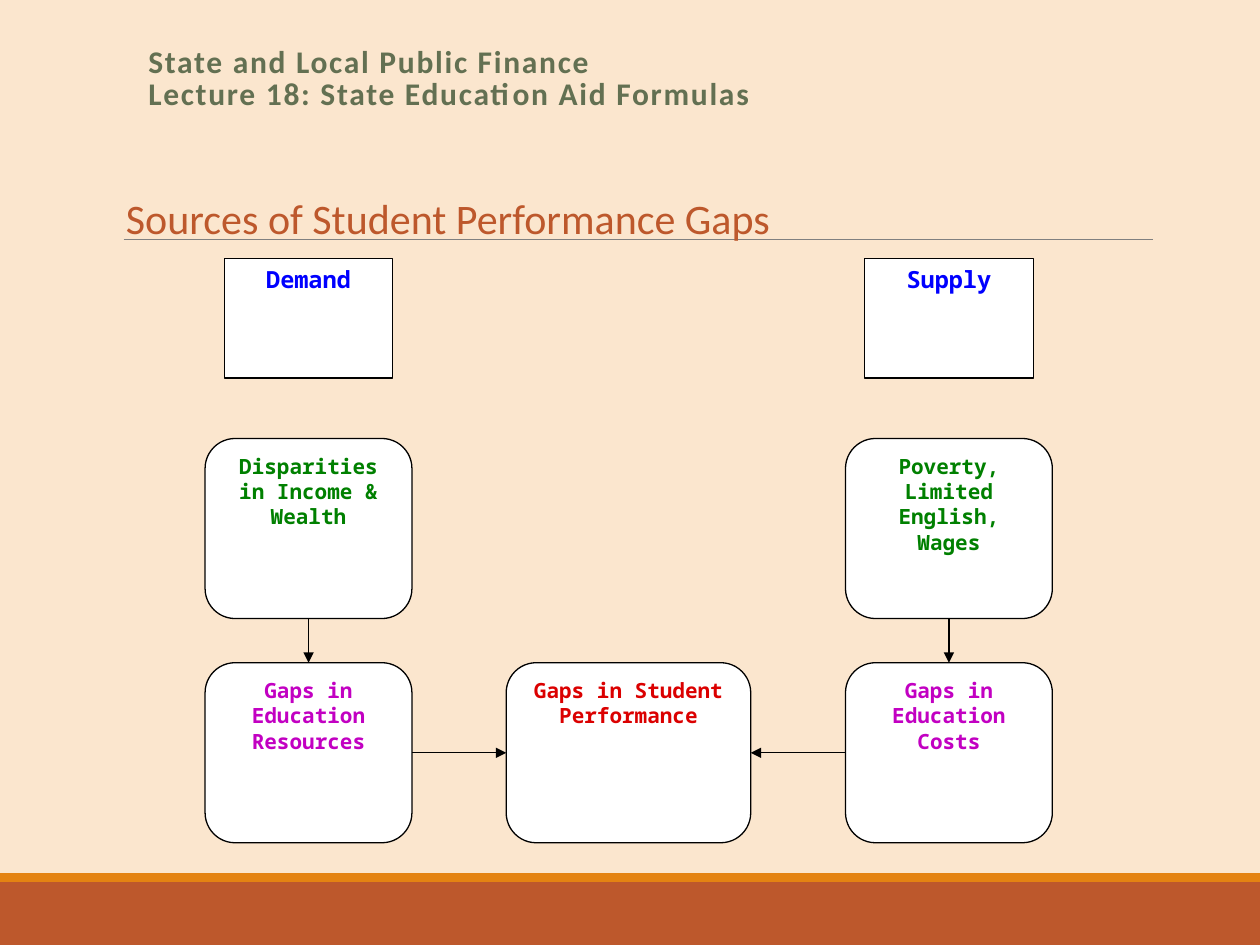
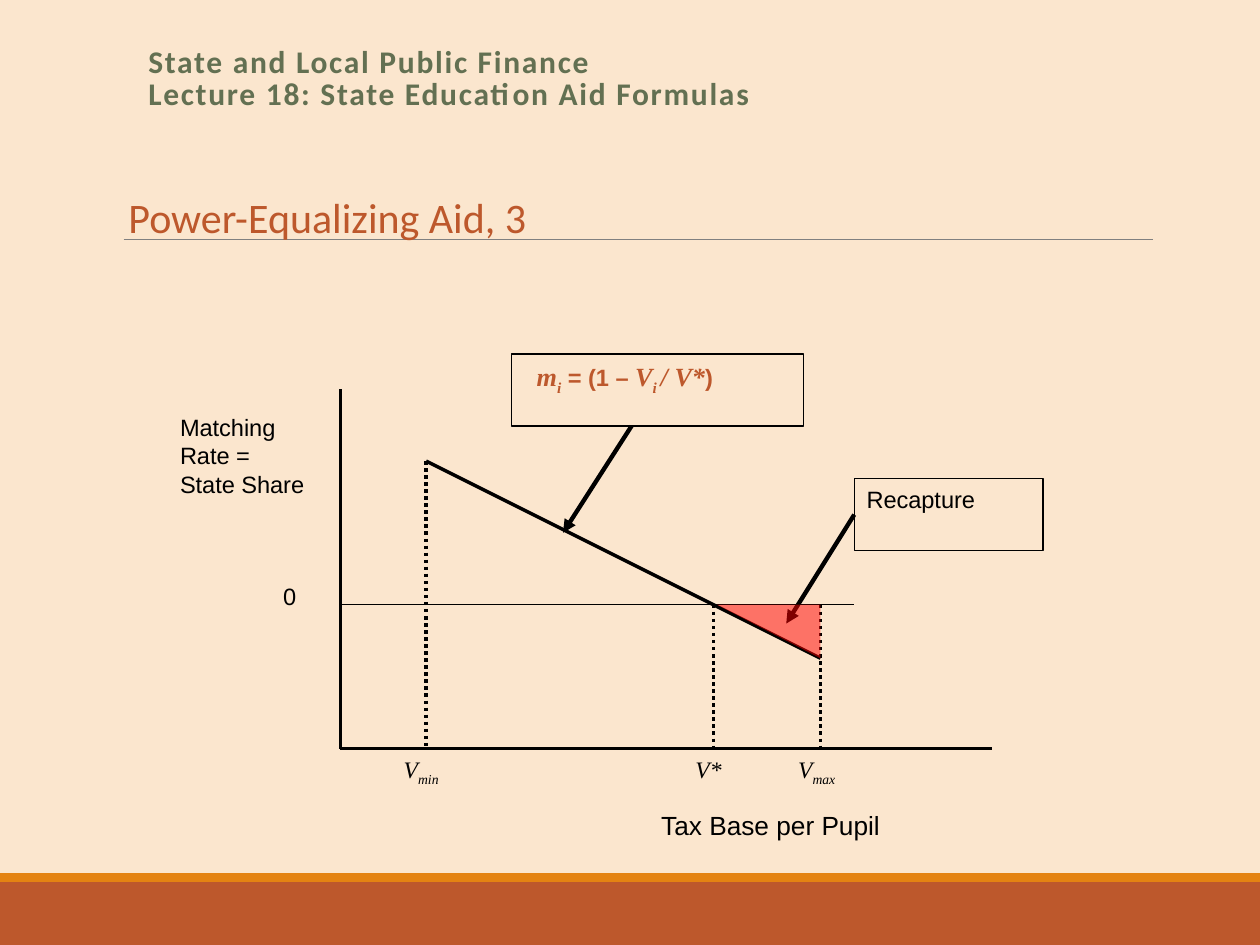
from dataclasses import dataclass, replace

from lxml import etree
from pptx import Presentation
from pptx import util as u
from pptx.dml.color import RGBColor
from pptx.enum import dml, shapes, text
from pptx.oxml import ns

CREAM = RGBColor(0xFB, 0xE6, 0xCE)
RUST = RGBColor(0xBD, 0x58, 0x2C)
ORANGE = RGBColor(0xE4, 0x83, 0x12)
GRAY = RGBColor(0x80, 0x80, 0x80)
OLIVE = RGBColor(0x63, 0x70, 0x52)
BLACK = RGBColor(0, 0, 0)
WHITE = RGBColor(0xFF, 0xFF, 0xFF)
GREEN = RGBColor(0, 0x80, 0)
PURPLE = RGBColor(0xC2, 0, 0xC2)
CRIMSON = RGBColor(0xDB, 0, 0)
BLUE = RGBColor(0, 0, 0xFF)
RED = RGBColor(0xFF, 0, 0)

TOP, LEFT, BOTTOM, RIGHT = range(4)  # connection sites
SHAPE = shapes.MSO_SHAPE


@dataclass
class TextStyle:
    font: str
    size: float
    color: RGBColor = BLACK
    bold: bool = False
    italic: bool = False
    baseline: int = 0
    tracking: int = 0


HEADER = TextStyle("Calibri", 18, OLIVE, bold=True, tracking=100)
TITLE = TextStyle("Calibri", 24, RUST)
FLOW = TextStyle("Noto Sans Mono", 12, bold=True)
LABEL = TextStyle("Arial", 13.5)
SYMBOL = TextStyle("Times New Roman", 13.5, italic=True)


class Deck:
    """Holds the presentation's style and the current slide."""

    def __init__(self):
        self.presentation = Presentation()
        self.presentation.slide_width = u.Cm(25.4)
        self.presentation.slide_height = u.Cm(19.05)
        self.slide = None

    def new_slide(self, title, left, top, width, height, line_spacing=1.0):
        self.slide = self.presentation.slides.add_slide(self.presentation.slide_layouts[6])
        self.slide.background.fill.solid()
        self.slide.background.fill.fore_color.rgb = CREAM
        # Footer bands and title rule
        self.shape(SHAPE.RECTANGLE, 0, 17.78, 25.4, 1.27, fill=RUST)
        self.shape(SHAPE.RECTANGLE, 0, 17.6, 25.4, 0.18, fill=ORANGE)
        self.line((2.49, 4.83), (23.24, 4.83), 0.5, color=GRAY)
        # Course header and slide title
        header = "State and Local Public Finance\nLecture 18: State Education Aid Formulas"
        self.textbox(2.74, 0.84, 20.96, 1.65, [[(header, HEADER)]], line_spacing=0.85)
        self.textbox(left, top, width, height, [[(title, TITLE)]],
                     line_spacing=line_spacing, anchor=text.MSO_ANCHOR.MIDDLE)

    def add_text(self, shape, paragraphs, align=text.PP_ALIGN.LEFT,
                 anchor=text.MSO_ANCHOR.TOP, line_spacing=None):
        """Fill a shape with paragraphs, each a list of (words, style) runs."""
        frame = shape.text_frame
        frame.word_wrap = True
        frame.vertical_anchor = anchor
        for index, runs in enumerate(paragraphs):
            paragraph = frame.add_paragraph() if index else frame.paragraphs[0]
            paragraph.alignment = align
            paragraph.line_spacing = line_spacing
            for words, style in runs:
                for number, row in enumerate(words.split("\n")):
                    if number:
                        paragraph.add_line_break()
                    self.add_run(paragraph, row, style)

    def add_run(self, paragraph, words, style):
        run = paragraph.add_run()
        run.text = words
        font = run.font
        font.name, font.size = style.font, u.Pt(style.size)
        font.bold, font.italic = style.bold, style.italic
        font.color.rgb = style.color
        properties = run._r.get_or_add_rPr()
        if style.baseline:
            properties.set("baseline", str(style.baseline * 1000))
        if style.tracking:
            properties.set("spc", str(style.tracking))

    def textbox(self, left, top, width, height, paragraphs, **layout):
        box = self.slide.shapes.add_textbox(u.Cm(left), u.Cm(top), u.Cm(width), u.Cm(height))
        self.add_text(box, paragraphs, **layout)

    def shape(self, kind, left, top, width, height, fill=None, outline=None, alpha=None):
        shape = self.slide.shapes.add_shape(
            kind, u.Cm(left), u.Cm(top), u.Cm(width), u.Cm(height))
        shape.shadow.inherit = False
        if fill is None:
            shape.fill.background()
        else:
            shape.fill.solid()
            shape.fill.fore_color.rgb = fill
        if alpha is not None:
            color = shape._element.spPr.find(".//" + ns.qn("a:srgbClr"))
            etree.SubElement(color, ns.qn("a:alpha")).set("val", str(alpha * 1000))
        if outline is None:
            shape.line.fill.background()
        else:
            shape.line.color.rgb = outline
            shape.line.width = u.Pt(0.75)
        return shape

    def flow_box(self, kind, center, top, width, height, words, color, size=12):
        box = self.shape(kind, center - width / 2, top, width, height, WHITE, BLACK)
        style = replace(FLOW, color=color, size=size)
        self.add_text(box, [[(words, style)]], align=text.PP_ALIGN.CENTER)
        return box

    def line(self, start, end, weight, color=BLACK, arrow=False, dotted=False):
        """Draw a line; each end is a point or a (shape, site) pair."""
        points = [(0, 0) if hasattr(spot[0], "shape_id") else spot for spot in (start, end)]
        connector = self.slide.shapes.add_connector(
            shapes.MSO_CONNECTOR.STRAIGHT,
            *[u.Cm(value) for point in points for value in point])
        for spot, join in ((start, connector.begin_connect), (end, connector.end_connect)):
            if hasattr(spot[0], "shape_id"):
                join(*spot)
        connector.line.color.rgb = color
        connector.line.width = u.Pt(weight)
        if dotted:
            connector.line.dash_style = dml.MSO_LINE.ROUND_DOT
        properties = connector._element.spPr
        if arrow:
            outline = properties.find(ns.qn("a:ln"))
            etree.SubElement(outline, ns.qn("a:tailEnd")).set("type", "triangle")
        etree.SubElement(properties, ns.qn("a:effectLst"))


def performance_gaps(deck):
    deck.new_slide("Sources of Student Performance Gaps", 2.29, 3.76, 14.07, 1.27)
    demand, result, supply = 6.22, 12.67, 19.13  # column centres
    cause_top, gap_top, height = 8.84, 13.36, 3.63
    rounded = SHAPE.FLOWCHART_ALTERNATE_PROCESS

    # Both sides: heading, cause, gap
    gaps = []
    for center, heading, cause, gap in (
        (demand, "Demand", "Disparities in Income & Wealth", "Gaps in Education Resources"),
        (supply, "Supply", "Poverty, Limited English, Wages", "Gaps in Education Costs"),
    ):
        deck.flow_box(SHAPE.FLOWCHART_PROCESS, center, 5.21, 3.4, 2.41, heading, BLUE, 13.5)
        cause_box = deck.flow_box(rounded, center, cause_top, 4.17, height, cause, GREEN)
        gap_box = deck.flow_box(rounded, center, gap_top, 4.17, height, gap, PURPLE)
        deck.line((cause_box, BOTTOM), (gap_box, TOP), 0.75, arrow=True)
        gaps.append(gap_box)

    # Common outcome
    outcome = deck.flow_box(rounded, result, gap_top, 4.93, height,
                            "Gaps in Student Performance", CRIMSON)
    deck.line((gaps[0], RIGHT), (outcome, LEFT), 0.75, arrow=True)
    deck.line((gaps[1], LEFT), (outcome, RIGHT), 0.75, arrow=True)


def power_equalizing(deck):
    deck.new_slide("Power-Equalizing Aid, 3", 2.34, 3.84, 8.64, 1.17, line_spacing=0.9)
    axis_x, axis_y, zero_y = 6.86, 15.09, 12.19
    v_min, v_star, v_max = 8.59, 14.38, 16.54
    slope = 0.5

    def rate_y(base):
        return zero_y + slope * (base - v_star)

    # Axes
    deck.line((axis_x, 7.85), (axis_x, axis_y), 2)
    deck.line((axis_x, axis_y), (19.99, axis_y), 2)
    deck.line((axis_x, zero_y), (17.22, zero_y), 0.75)
    deck.textbox(5.46, 11.61, 1.37, 1.45, [[("0", LABEL)]])
    deck.textbox(3.38, 8.2, 4.42, 2.54,
                 [[(words, LABEL)] for words in ("Matching", "Rate =", "State Share")])
    deck.textbox(13.08, 16.18, 7.26, 1.45,
                 [[("Tax Base per Pupil", replace(LABEL, size=15))]])

    # Tax base marks
    subscript = replace(SYMBOL, baseline=-25)
    for base, top, offset, width, runs in (
        (v_min, rate_y(v_min), 0.7, 2.77, [("V", SYMBOL), ("min", subscript)]),
        (v_star, zero_y, 0.61, 1.73, [("V*", SYMBOL)]),
        (v_max, zero_y, 0.7, 2.77, [("V", SYMBOL), ("max", subscript)]),
    ):
        deck.line((base, top), (base, axis_y), 2, dotted=True)
        deck.textbox(base - offset, axis_y, width, 1.45, [runs])

    # Matching rate line and its formula
    deck.line((v_min, rate_y(v_min)), (v_max, rate_y(v_max)), 2)
    formula = deck.shape(SHAPE.RECTANGLE, 10.31, 7.14, 5.89, 1.45, outline=BLACK)
    formula.text_frame.margin_left = u.Cm(0.51)
    symbol = replace(SYMBOL, size=15, color=RUST, bold=True)
    index = replace(symbol, baseline=-25)
    plain = replace(LABEL, color=RUST, bold=True)
    deck.add_text(formula, [[("m", symbol), ("i", index), (" = (1 – ", plain), ("V", symbol),
                             ("i ", index), ("/ V*", symbol), (")", plain)]])
    deck.line((12.73, 8.59), (11.35, 10.74), 2.5, arrow=True)

    # Recapture region
    recapture = deck.shape(SHAPE.RECTANGLE, 17.22, 9.65, 3.81, 1.45, outline=BLACK)
    deck.add_text(recapture, [[("Recapture", LABEL)]])
    deck.line((recapture, LEFT), (15.85, 12.57), 2.5, arrow=True)
    region_left = v_star + 0.07
    region = deck.shape(SHAPE.RIGHT_TRIANGLE, region_left, zero_y, v_max - region_left,
                        rate_y(v_max) - zero_y, fill=RED, alpha=50)
    region.rotation = 180


def main():
    deck = Deck()
    performance_gaps(deck)
    power_equalizing(deck)
    deck.presentation.save("out.pptx")


if __name__ == "__main__":
    main()
